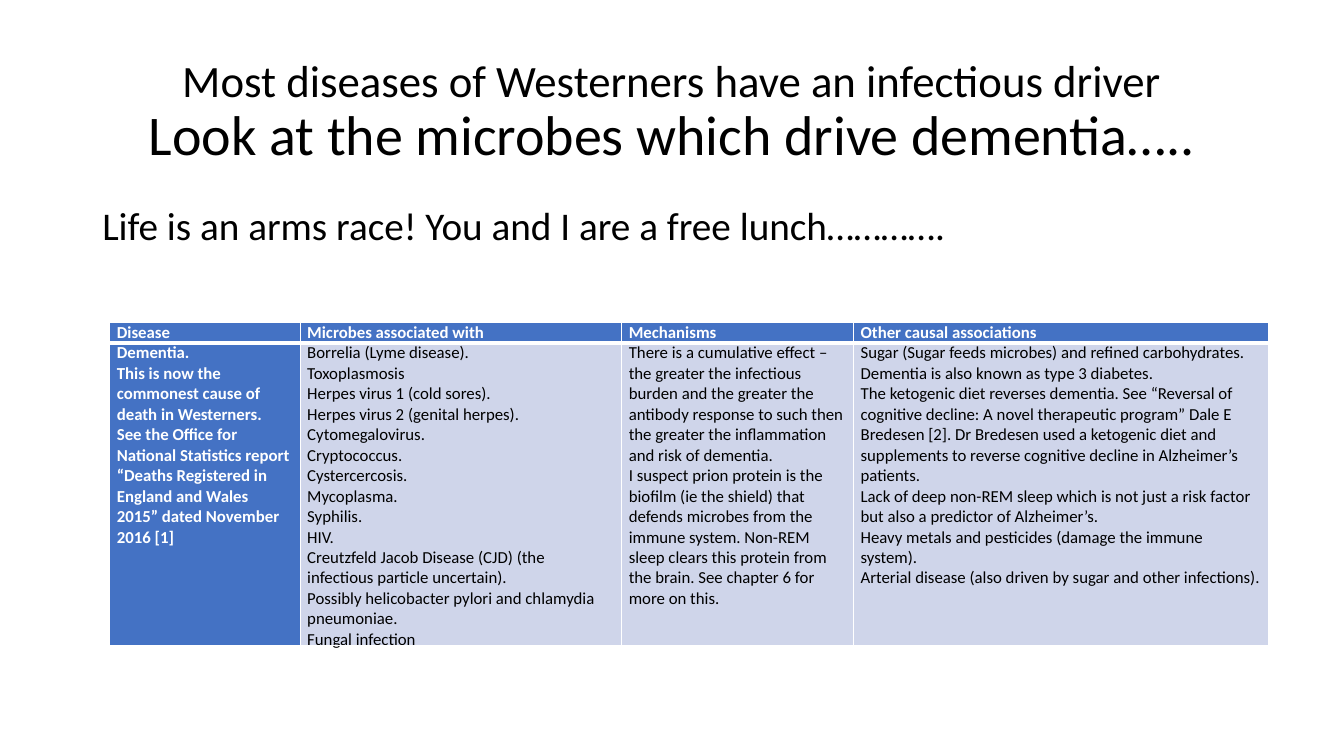
import pptx
import pptx.dml.color
import pptx.enum.text
import pptx.oxml
import pptx.oxml.ns
import pptx.util
from pptx.util import Pt

COLOURS = {"text": "000000", "light": "FFFFFF", "accent": "4472C4", "body": "CFD5EA"}
FONT = "Calibri"
CENTRE = pptx.enum.text.PP_ALIGN.CENTER
MIDDLE = pptx.enum.text.MSO_ANCHOR.MIDDLE

COLUMN_WIDTHS = [136, 229.7, 165.6, 296.7]
ROW_HEIGHTS = [14, 210]
HEADINGS = ["Disease", "Microbes associated with", "Mechanisms", "Other causal associations"]
DETAILS = [
    [
        "Dementia.",
        "This is now the commonest cause of death in Westerners.",
        "See the Office for National Statistics report “Deaths Registered in England "
        "and Wales 2015” dated November 2016 [1]",
    ],
    [
        "Borrelia (Lyme disease).",
        "Toxoplasmosis",
        "Herpes virus 1 (cold sores).",
        "Herpes virus 2 (genital herpes).",
        "Cytomegalovirus.",
        "Cryptococcus.",
        "Cystercercosis.",
        "Mycoplasma.",
        "Syphilis.",
        "HIV.",
        "Creutzfeld Jacob Disease (CJD) (the infectious particle uncertain).",
        "Possibly helicobacter pylori and chlamydia pneumoniae.",
        "Fungal infection",
    ],
    [
        "There is a cumulative effect – the greater the infectious burden and the greater "
        "the antibody response to such then the greater the inflammation and risk of dementia.",
        "I suspect prion protein is the biofilm (ie the shield) that defends microbes from "
        "the immune system. Non-REM sleep clears this protein from the brain. "
        "See chapter 6 for more on this.",
    ],
    [
        "Sugar (Sugar feeds microbes) and refined carbohydrates. "
        "Dementia is also known as type 3 diabetes.",
        "The ketogenic diet reverses dementia. See “Reversal of cognitive decline: A novel "
        "therapeutic program” Dale E Bredesen [2]. Dr Bredesen used a ketogenic diet and "
        "supplements to reverse cognitive decline in Alzheimer’s patients.",
        "Lack of deep non-REM sleep which is not just a risk factor but also a predictor "
        "of Alzheimer’s.",
        "Heavy metals and pesticides (damage the immune system).",
        "Arterial disease (also driven by sugar and other infections).",
    ],
]


def colour(name):
    return pptx.dml.color.RGBColor.from_string(COLOURS[name])


def apply_format(target, values):
    for name, value in values.items():
        setattr(target, name, value)


def add_span(para, text, size, shade="text", bold=False):
    span = para.add_run()
    span.text = text
    apply_format(span.font, {"name": FONT, "size": Pt(size), "bold": bold})
    span.font.color.rgb = colour(shade)


def add_text(page, place, lines, frame_format, para_format):
    """Add a one-paragraph box; lines holds (text, size) pairs."""
    box = page.shapes.add_textbox(*map(Pt, place))
    frame = box.text_frame
    apply_format(frame, {"word_wrap": True, **frame_format})
    para = frame.paragraphs[0]
    apply_format(para, {"line_spacing": 0.9, **para_format})
    for index, (text, size) in enumerate(lines):
        if index:
            para.add_line_break()
        add_span(para, text, size)


def add_borders(cell, widths):
    """Draw white cell edges; widths maps L, R, T and B to points."""
    properties = cell._tc.get_or_add_tcPr()
    for side, width in widths.items():
        properties.append(pptx.oxml.parse_xml(
            f'<a:ln{side} {pptx.oxml.ns.nsdecls("a")} w="{Pt(width)}">'
            f'<a:solidFill><a:srgbClr val="{COLOURS["light"]}"/></a:solidFill></a:ln{side}>'
        ))


def fill_cell(cell, texts, strong, borders):
    apply_format(cell, {"margin_left": Pt(5), "margin_right": Pt(5),
                        "margin_top": 0, "margin_bottom": 0})
    add_borders(cell, borders)
    cell.fill.solid()
    cell.fill.fore_color.rgb = colour("accent" if strong else "body")
    frame = cell.text_frame
    for index, text in enumerate(texts):
        para = frame.add_paragraph() if index else frame.paragraphs[0]
        add_span(para, text, 12, "light" if strong else "text", strong)


def add_disease_table(page):
    rows = [[[heading] for heading in HEADINGS], DETAILS]
    table = page.shapes.add_table(
        len(rows), len(HEADINGS), Pt(78.5), Pt(230.4),
        Pt(sum(COLUMN_WIDTHS)), Pt(sum(ROW_HEIGHTS)),
    ).table
    for column, width in zip(table.columns, COLUMN_WIDTHS):
        column.width = Pt(width)
    for row, height in zip(table.rows, ROW_HEIGHTS):
        row.height = Pt(height)
    for row_index, row in enumerate(rows):
        header = row_index == 0
        borders = {"L": 1, "R": 1, "T": 1 if header else 3, "B": 3 if header else 1}
        for column_index, texts in enumerate(row):
            strong = header or column_index == 0
            fill_cell(table.cell(row_index, column_index), texts, strong, borders)


def main():
    deck = pptx.Presentation()
    apply_format(deck, {"slide_width": Pt(960), "slide_height": Pt(540)})
    page = deck.slides.add_slide(deck.slide_layouts[6])
    add_text(
        page, (66, 28.75, 828, 104.4),
        [("Most diseases of Westerners have an infectious driver", 32),
         ("Look at the microbes which drive dementia…..", 40)],
        {"vertical_anchor": MIDDLE}, {"alignment": CENTRE},
    )
    add_text(
        page, (66, 143.75, 828, 342.6),
        [("Life is an arms race! You and I are a free lunch………….", 28)],
        {}, {"space_before": Pt(10)},
    )
    add_disease_table(page)
    deck.save("out.pptx")


if __name__ == "__main__":
    main()
